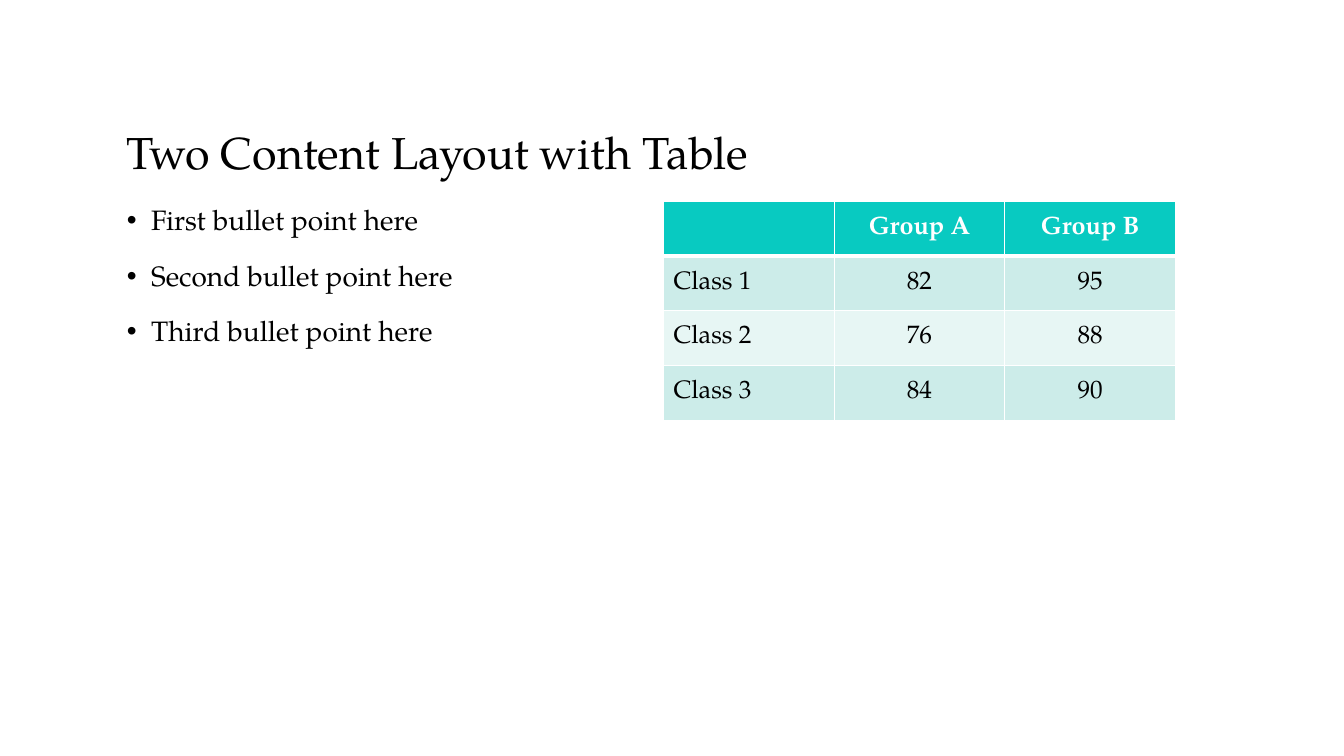
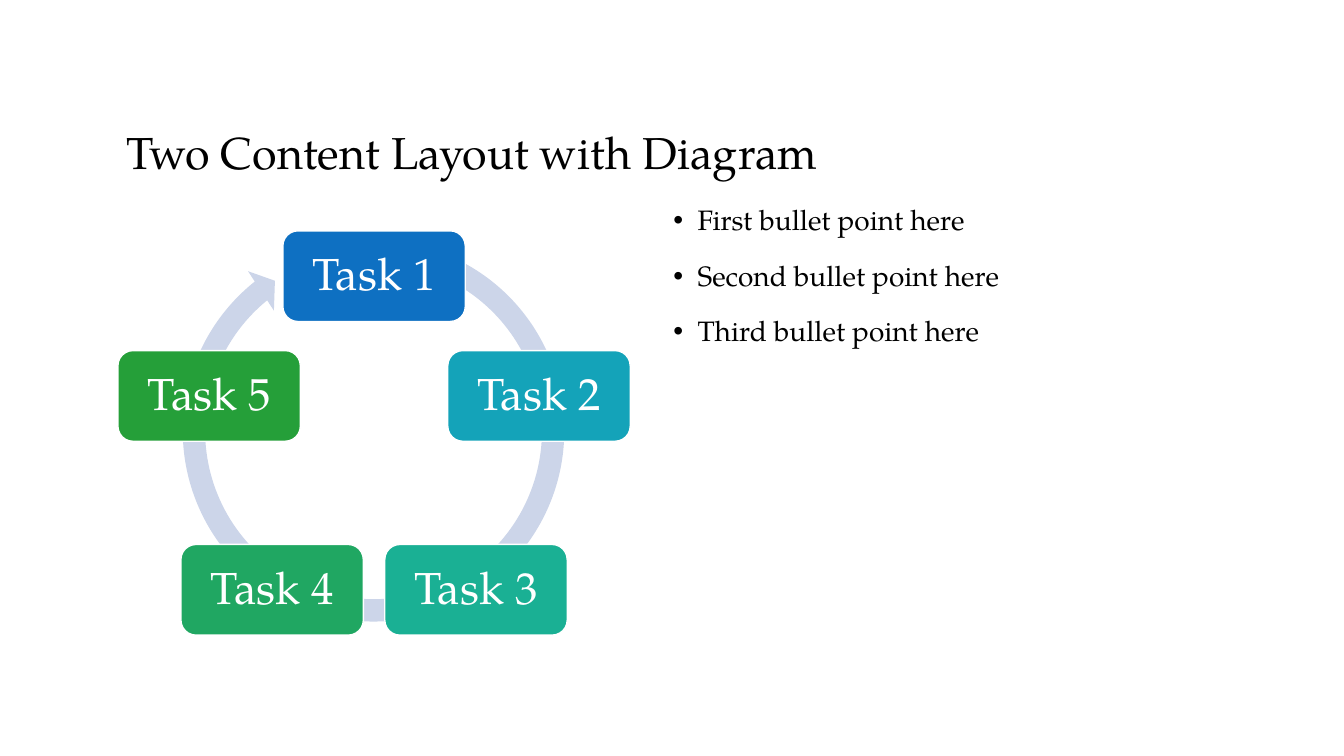
from math import cos, radians, sin

from lxml import etree
from pptx import Presentation
from pptx.dml.color import RGBColor
from pptx.enum.shapes import MSO_SHAPE
from pptx.enum.text import MSO_ANCHOR, PP_ALIGN
from pptx.oxml.ns import qn
from pptx.util import Inches, Pt

ROUNDED = MSO_SHAPE.ROUNDED_RECTANGLE
CIRCULAR_ARROW = MSO_SHAPE.CIRCULAR_ARROW
LEFT, CENTER = PP_ALIGN.LEFT, PP_ALIGN.CENTER
TOP, MIDDLE, BOTTOM = MSO_ANCHOR.TOP, MSO_ANCHOR.MIDDLE, MSO_ANCHOR.BOTTOM

FONT = "TeX Gyre Pagella"
BLACK, WHITE = "000000", "FFFFFF"
HEADER_FILL = "08CAC1"
BAND_FILLS = ["CCECE9", "E7F6F4"]
RING_FILL = "CCD5E9"

LEFT_COLUMN, RIGHT_COLUMN = 1.16, 6.58
CONTENT_TOP, COLUMN_WIDTH = 2, 5.08

BULLETS = [
    "First bullet point here",
    "Second bullet point here",
    "Third bullet point here",
]
SCORES = [
    ["", "Group A", "Group B"],
    ["Class 1", "82", "95"],
    ["Class 2", "76", "88"],
    ["Class 3", "84", "90"],
]
TASKS = [
    ("Task 1", "0E70C2"),
    ("Task 2", "14A3B9"),
    ("Task 3", "1AB094"),
    ("Task 4", "20A762"),
    ("Task 5", "259F39"),
]


def color(value):
    return RGBColor.from_string(value)


def write(paragraph, text, size=20, fill=BLACK, bold=False, align=LEFT, spacing=0.9):
    paragraph.text = text
    paragraph.alignment = align
    paragraph.line_spacing = spacing
    font = paragraph.font
    font.name, font.size, font.bold = FONT, Pt(size), bold
    font.color.rgb = color(fill)


def add_text_box(page, left, top, width, height, anchor=TOP):
    box = page.shapes.add_textbox(
        Inches(left), Inches(top), Inches(width), Inches(height)
    )
    box.text_frame.word_wrap = True
    box.text_frame.vertical_anchor = anchor
    return box.text_frame


def add_page(deck, title):
    page = deck.slides.add_slide(deck.slide_layouts[6])
    frame = add_text_box(page, LEFT_COLUMN, 0.58, 10.5, 1.25, anchor=BOTTOM)
    write(frame.paragraphs[0], title, size=32)
    return page


def add_bullets(page, left):
    frame = add_text_box(page, left, CONTENT_TOP, COLUMN_WIDTH, 4.58)
    for index, text in enumerate(BULLETS):
        paragraph = frame.add_paragraph() if index else frame.paragraphs[0]
        properties = paragraph._p.get_or_add_pPr()
        properties.set("marL", str(Inches(0.24)))
        properties.set("indent", str(-Inches(0.24)))
        etree.SubElement(properties, qn("a:buFont"), typeface="Arial")
        etree.SubElement(properties, qn("a:buChar"), char="•")
        write(paragraph, text)
        if index:
            paragraph.space_before = Pt(18)


def set_borders(cell, **widths):
    properties = cell._tc.get_or_add_tcPr()
    for side in "LRTB":
        width = Pt(widths.get(side, 1))
        line = etree.SubElement(properties, qn(f"a:ln{side}"), w=str(width))
        fill = etree.SubElement(line, qn("a:solidFill"))
        etree.SubElement(fill, qn("a:srgbClr"), val=WHITE)


def add_score_table(page):
    table = page.shapes.add_table(
        len(SCORES), len(SCORES[0]), Inches(RIGHT_COLUMN), Inches(CONTENT_TOP),
        Inches(COLUMN_WIDTH), Inches(2.17),
    ).table
    for row, values in enumerate(SCORES):
        header = row == 0
        for column, text in enumerate(values):
            cell = table.cell(row, column)
            set_borders(cell, T=3 if row == 1 else 1, B=3 if header else 1)
            cell.fill.solid()
            cell.fill.fore_color.rgb = color(
                HEADER_FILL if header else BAND_FILLS[(row - 1) % 2]
            )
            cell.vertical_anchor = MIDDLE
            write(
                cell.text_frame.paragraphs[0], text, size=18, bold=header,
                fill=WHITE if header else BLACK,
                align=CENTER if column else LEFT, spacing=1.0,
            )


def add_filled_shape(page, kind, left, top, width, height, fill):
    shape = page.shapes.add_shape(
        kind, Inches(left), Inches(top), Inches(width), Inches(height)
    )
    shape.shadow.inherit = False
    shape.fill.solid()
    shape.fill.fore_color.rgb = color(fill)
    shape.line.fill.background()
    return shape


def add_task_cycle(page):
    ring = add_filled_shape(page, CIRCULAR_ARROW, 1.69, 2.26, 4.03, 4.03, RING_FILL)
    for index, value in enumerate([0.055, 3.307, 138.718, 173.279, 0.058]):
        ring.adjustments[index] = value

    center_x, center_y, radius = 3.71, 4.46, 1.72
    width, height = 1.81, 0.9
    for index, (name, fill) in enumerate(TASKS):
        angle = radians(index * 360 / len(TASKS))
        left = center_x + radius * sin(angle) - width / 2
        top = center_y - radius * cos(angle) - height / 2
        task = add_filled_shape(page, ROUNDED, left, top, width, height, fill)
        task.line.color.rgb = color(WHITE)
        task.line.width = Pt(1)
        frame = task.text_frame
        frame.word_wrap = True
        frame.vertical_anchor = MIDDLE
        write(frame.paragraphs[0], name, size=32, fill=WHITE, align=CENTER)


def main():
    deck = Presentation()
    deck.slide_width, deck.slide_height = Inches(13.33), Inches(7.5)

    page = add_page(deck, "Two Content Layout with Table")
    add_bullets(page, LEFT_COLUMN)
    add_score_table(page)

    page = add_page(deck, "Two Content Layout with Diagram")
    add_task_cycle(page)
    add_bullets(page, RIGHT_COLUMN)

    deck.save("out.pptx")


if __name__ == "__main__":
    main()
